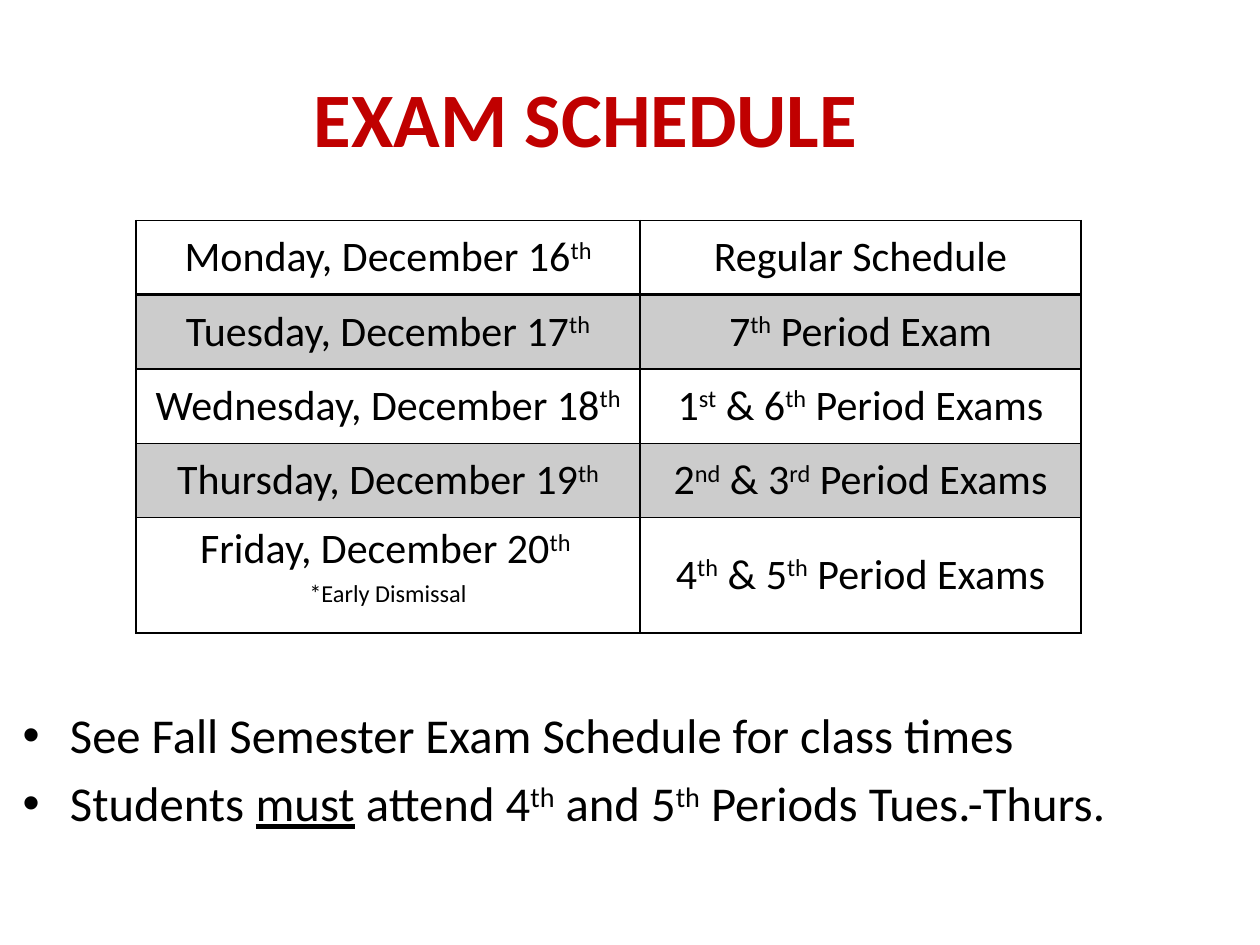
from dataclasses import dataclass

from lxml import etree
from pptx import Presentation
from pptx.dml.color import RGBColor
from pptx.enum.text import MSO_ANCHOR, MSO_AUTO_SIZE, PP_ALIGN
from pptx.oxml.ns import qn
from pptx.util import Inches, Pt

CENTER = PP_ALIGN.CENTER
MIDDLE = MSO_ANCHOR.MIDDLE
BOTTOM = MSO_ANCHOR.BOTTOM
NO_AUTOFIT = MSO_AUTO_SIZE.NONE

FONT = "Calibri"
COLORS = {"title": "C00000", "text": "000000", "border": "000000", "band": "CCCCCC"}
COLUMN_WIDTHS = (4, 3.5)
ROW_HEIGHT = 0.59
TWO_LINE_ROW_HEIGHT = 0.91


@dataclass(frozen=True)
class ExamDay:
    """Text between ^ marks is superscript, and between _ marks underlined."""
    date: str
    schedule: str
    note: str = ""


EXAM_DAYS = (
    ExamDay("Monday, December 16^th", "Regular Schedule"),
    ExamDay("Tuesday, December 17^th", "7^th^ Period Exam"),
    ExamDay("Wednesday, December 18^th", "1^st^ & 6^th^ Period Exams"),
    ExamDay("Thursday, December 19^th", "2^nd^ & 3^rd^ Period Exams"),
    ExamDay("Friday, December 20^th ", "4^th^ & 5^th^ Period Exams", "^*Early Dismissal"),
)
REMINDERS = (
    "See Fall Semester Exam Schedule for class times",
    "Students _must_ attend 4^th^ and 5^th^ Periods Tues.-Thurs.",
)


def add_runs(paragraph, marked_text: str, size: float, color: str = "text",
             bold: bool = False) -> None:
    """Add one run for each stretch of plain, superscript or underlined text."""
    for raised_index, stretch in enumerate(marked_text.split("^")):
        for underline_index, text in enumerate(stretch.split("_")):
            if not text:
                continue
            run = paragraph.add_run()
            run.text = text
            run.font.name = FONT
            run.font.size = Pt(size)
            run.font.bold = bold
            run.font.color.rgb = RGBColor.from_string(COLORS[color])
            if underline_index % 2:
                run.font.underline = True
            if raised_index % 2:
                run._r.get_or_add_rPr().set("baseline", "30000")


def place(shape, left: float, top: float, width: float, height: float) -> None:
    shape.left, shape.top = Inches(left), Inches(top)
    shape.width, shape.height = Inches(width), Inches(height)


def set_borders(cell, top: float, bottom: float) -> None:
    """Draw all four cell borders; the sides are 1 point wide."""
    properties = cell._tc.get_or_add_tcPr()
    for tag, width in (("lnL", 1), ("lnR", 1), ("lnT", top), ("lnB", bottom)):
        line = etree.SubElement(properties, qn(f"a:{tag}"), w=str(Pt(width)))
        fill = etree.SubElement(line, qn("a:solidFill"))
        etree.SubElement(fill, qn("a:srgbClr"), val=COLORS["border"])


def fill_cell(cell, lines: list[str], row_index: int) -> None:
    set_borders(cell, top=2 if row_index == 1 else 1, bottom=2 if row_index == 0 else 1)
    if row_index % 2:
        cell.fill.solid()
        cell.fill.fore_color.rgb = RGBColor.from_string(COLORS["band"])
    else:
        cell.fill.background()
    cell.vertical_anchor = MIDDLE
    for index, line in enumerate(lines):
        frame = cell.text_frame
        paragraph = frame.add_paragraph() if index else frame.paragraphs[0]
        paragraph.alignment = CENTER
        add_runs(paragraph, line, 24)


def add_title(slide) -> None:
    title = slide.shapes.title
    place(title, 0.5, 0.3, 9, 1.25)
    frame = title.text_frame
    frame.auto_size = NO_AUTOFIT
    frame.vertical_anchor = MIDDLE
    frame.margin_right = Inches(0.8)
    frame.paragraphs[0].alignment = CENTER
    add_runs(frame.paragraphs[0], "EXAM SCHEDULE", 44, "title", bold=True)


def add_reminders(slide) -> None:
    body = slide.placeholders[1]
    place(body, 0.08, 1.5, 9.42, 5.5)
    frame = body.text_frame
    frame.auto_size = NO_AUTOFIT
    frame.vertical_anchor = BOTTOM
    frame.margin_bottom = Inches(0.4)
    for index, reminder in enumerate(REMINDERS):
        paragraph = frame.add_paragraph() if index else frame.paragraphs[0]
        add_runs(paragraph, reminder, 27.8)


def add_schedule(slide) -> None:
    heights = [TWO_LINE_ROW_HEIGHT if day.note else ROW_HEIGHT for day in EXAM_DAYS]
    table = slide.shapes.add_table(
        len(EXAM_DAYS), len(COLUMN_WIDTHS), Inches(1.08), Inches(1.75),
        Inches(sum(COLUMN_WIDTHS)), Inches(sum(heights))).table
    table.first_row = False
    table.horz_banding = False
    for column, width in zip(table.columns, COLUMN_WIDTHS):
        column.width = Inches(width)
    for index, day in enumerate(EXAM_DAYS):
        table.rows[index].height = Inches(heights[index])
        date_lines = [day.date, day.note] if day.note else [day.date]
        fill_cell(table.cell(index, 0), date_lines, index)
        fill_cell(table.cell(index, 1), [day.schedule], index)


def main() -> None:
    presentation = Presentation()
    presentation.slide_width = Inches(10)
    presentation.slide_height = Inches(7.5)
    slide = presentation.slides.add_slide(presentation.slide_layouts[1])
    add_title(slide)
    add_reminders(slide)
    add_schedule(slide)
    presentation.save("out.pptx")


if __name__ == "__main__":
    main()
